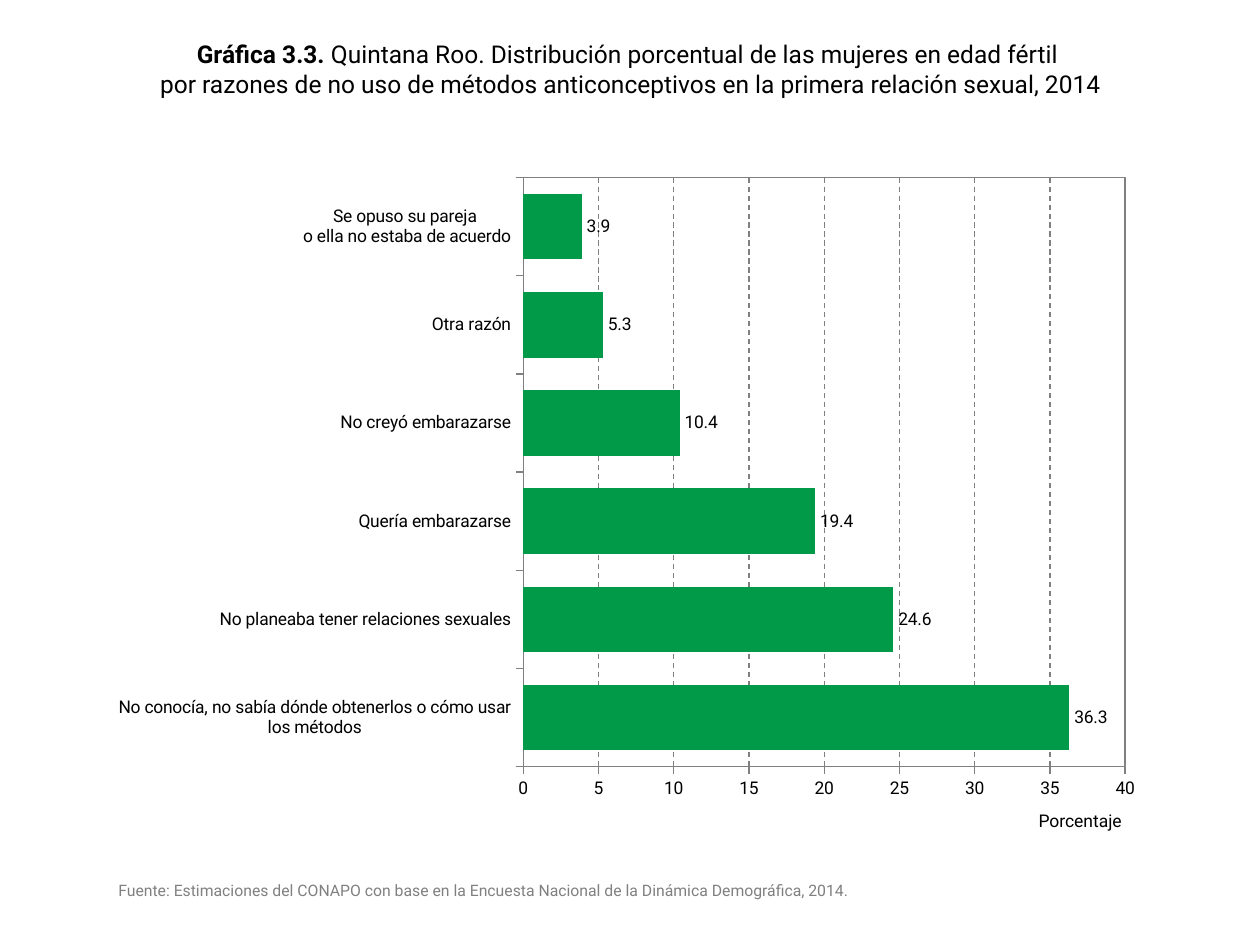
from lxml import etree
from pptx import Presentation
from pptx.chart.data import CategoryChartData
from pptx.dml.color import RGBColor
from pptx.enum.chart import XL_CHART_TYPE, XL_LABEL_POSITION, XL_TICK_MARK
from pptx.enum.dml import MSO_LINE
from pptx.enum.text import MSO_ANCHOR, PP_ALIGN
from pptx.oxml import parse_xml
from pptx.oxml.ns import nsdecls
from pptx.util import Pt

BAR = XL_CHART_TYPE.BAR_CLUSTERED
OUTSIDE_END = XL_LABEL_POSITION.OUTSIDE_END
TICK_OUT = XL_TICK_MARK.OUTSIDE
TICK_NONE = XL_TICK_MARK.NONE
DASH = MSO_LINE.DASH
MIDDLE = MSO_ANCHOR.MIDDLE
TOP = MSO_ANCHOR.TOP
LEFT, CENTER, RIGHT = PP_ALIGN.LEFT, PP_ALIGN.CENTER, PP_ALIGN.RIGHT

FONT = "Roboto"
BLACK, GRAY, GREEN = "000000", "808080", "009A48"

REASONS = [
    ("No conocía, no sabía dónde obtenerlos o cómo usar los métodos", 36.3),
    ("No planeaba tener relaciones sexuales", 24.6),
    ("Quería embarazarse", 19.4),
    ("No creyó embarazarse", 10.4),
    ("Otra razón", 5.3),
    ("Se opuso su pareja \no ella no estaba de acuerdo", 3.9),
]


def rgb(color):
    return RGBColor.from_string(color)


def set_font(font, size, color, bold=False):
    font.name = FONT
    font.size = Pt(size)
    font.bold = bold
    font.color.rgb = rgb(color)


def add_box(s, box, anchor, align):
    tf = s.shapes.add_textbox(*map(Pt, box)).text_frame
    tf.word_wrap = True
    tf.vertical_anchor = anchor
    tf.paragraphs[0].alignment = align
    return tf.paragraphs[0]


def add_run(p, text, size, color, bold=False):
    r = p.add_run()
    r.text = text
    set_font(r.font, size, color, bold)


def add_title(s, box):
    p = add_box(s, box, MIDDLE, CENTER)
    add_run(p, "Gráfica 3.3. ", 14, BLACK, True)
    add_run(p, "Quintana Roo. Distribución porcentual de las mujeres en edad fértil ", 14, BLACK)
    p.add_line_break()
    add_run(p, "por razones de no uso de métodos anticonceptivos "
               "en la primera relación sexual, 2014", 14, BLACK)


def add_caption(s, box, text, size, color, align):
    add_run(add_box(s, box, TOP, align), text, size, color)


def set_plot_area(chart, x, y, w, h):
    area = chart.element.chart.plotArea
    for old in area.xpath("c:layout"):
        area.remove(old)
    layout = parse_xml(f"<c:layout {nsdecls('c')}><c:manualLayout/></c:layout>")
    manual = layout[0]
    settings = [("layoutTarget", "inner"), ("xMode", "edge"), ("yMode", "edge"),
                ("x", x), ("y", y), ("w", w), ("h", h)]
    for tag, value in settings:
        etree.SubElement(manual, f"{{{manual.nsmap['c']}}}{tag}", val=str(value))
    area.insert(0, layout)
    area.append(parse_xml(
        f"<c:spPr {nsdecls('c', 'a')}><a:noFill/><a:ln w='9525'><a:solidFill>"
        f"<a:srgbClr val='{GRAY}'/></a:solidFill></a:ln></c:spPr>"))


def style_axis(axis):
    axis.major_tick_mark = TICK_OUT
    axis.minor_tick_mark = TICK_NONE
    axis.format.line.color.rgb = rgb(GRAY)
    axis.format.line.width = Pt(0.75)
    set_font(axis.tick_labels.font, 10, BLACK)


def add_reasons_chart(s, box):
    data = CategoryChartData(number_format="0.0")
    data.categories = [reason for reason, _ in REASONS]
    data.add_series("Series 1", [value for _, value in REASONS])
    chart = s.shapes.add_chart(BAR, *map(Pt, box), data).chart
    chart.has_title = False
    chart.has_legend = False
    set_font(chart.font, 10, BLACK)

    plot = chart.plots[0]
    plot.gap_width = 50
    plot.vary_by_categories = False
    fill = plot.series[0].format.fill
    fill.solid()
    fill.fore_color.rgb = rgb(GREEN)
    labels = plot.series[0].data_labels
    labels.show_value = True
    labels.number_format = "0.0"
    labels.number_format_is_linked = False
    labels.position = OUTSIDE_END
    set_font(labels.font, 10, BLACK)

    style_axis(chart.category_axis)
    axis = chart.value_axis
    style_axis(axis)
    axis.minimum_scale, axis.maximum_scale, axis.major_unit = 0, 40, 5
    axis.tick_labels.number_format = "0"
    axis.tick_labels.number_format_is_linked = False
    axis.has_major_gridlines = True
    grid = axis.major_gridlines.format.line
    grid.color.rgb = rgb(GRAY)
    grid.width = Pt(0.75)
    grid.dash_style = DASH
    set_plot_area(chart, 0.39, 0.032, 0.588, 0.882)


def main():
    prs = Presentation()
    prs.slide_width, prs.slide_height = Pt(720), Pt(540)
    s = prs.slides.add_slide(prs.slide_layouts[6])
    add_reasons_chart(s, (67.7, 89.3, 588.2, 381.6))
    add_title(s, (20.2, 15.1, 680.4, 48.2))
    add_caption(s, (563, 459.4, 85, 19.4), "Porcentaje", 10, BLACK, RIGHT)
    add_caption(s, (60.5, 499.7, 570.2, 18),
                "Fuente: Estimaciones del CONAPO con base en la Encuesta Nacional "
                "de la Dinámica Demográfica, 2014.", 9, GRAY, LEFT)
    prs.save("out.pptx")


if __name__ == "__main__":
    main()
